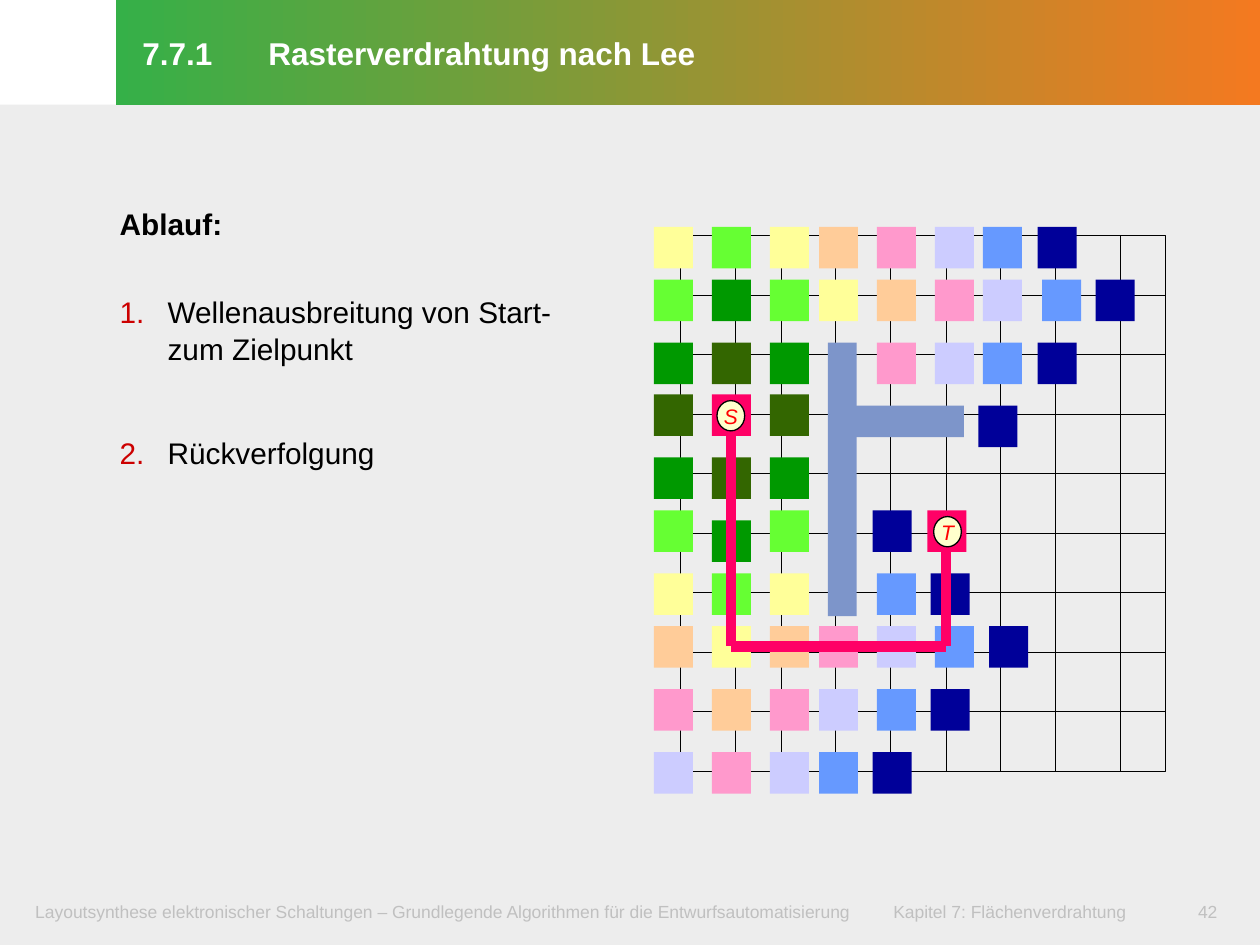
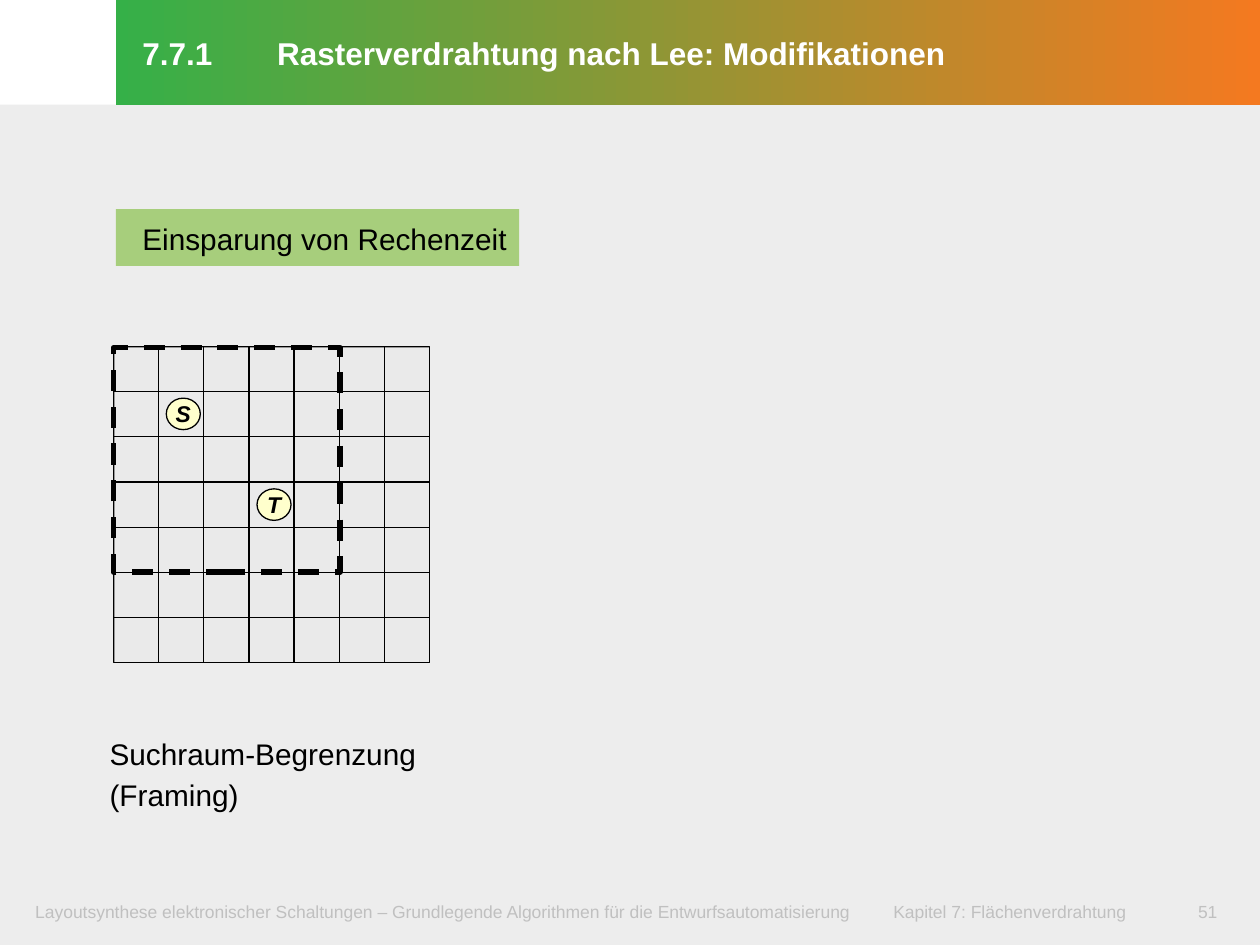
"""Builds two slides on Lee maze routing: wave expansion and search framing."""
from dataclasses import dataclass, field
from itertools import pairwise
from typing import Any

from lxml import etree
from pptx import Presentation
from pptx.dml.color import RGBColor
from pptx.enum.dml import MSO_LINE
from pptx.enum.shapes import MSO_CONNECTOR, MSO_SHAPE
from pptx.enum.text import MSO_ANCHOR, MSO_AUTO_SIZE, PP_ALIGN
from pptx.oxml.ns import qn
from pptx.util import Inches, Pt

RECT, OVAL, STRAIGHT = MSO_SHAPE.RECTANGLE, MSO_SHAPE.OVAL, MSO_CONNECTOR.STRAIGHT
LEFT, CENTER = PP_ALIGN.LEFT, PP_ALIGN.CENTER
TOP, MIDDLE = MSO_ANCHOR.TOP, MSO_ANCHOR.MIDDLE
NO_FIT, DASH = MSO_AUTO_SIZE.NONE, MSO_LINE.DASH

WIDTH, HEIGHT = Inches(10), Inches(7.5)
UNIT = WIDTH / 100
FONT = "Arial"
TITLE_LAYOUT, CONTENT_LAYOUT = 5, 1

COLORS = {
    "panel": "EDEDED", "footer": "C0C0C0", "band_start": "35B048",
    "band_end": "F47920", "white": "FFFFFF", "black": "000000",
    "number": "CC0000", "obstacle": "7D95CA", "route": "FF0066",
    "token": "FFFFCC", "token_letter": "FF0000", "field": "EAEAEA",
    "field_edge": "969696", "topic": "A7CE7C",
    "1": "336600", "2": "009900", "3": "66FF33", "4": "FFFF99", "5": "FFCC99",
    "6": "FF99CC", "7": "CCCCFF", "8": "6699FF", "9": "000099",
}


@dataclass(frozen=True)
class Box:
    """Area in columns and rows of a 100 by 75 slide grid."""
    left: float
    top: float
    width: float
    height: float

    def emu(self) -> tuple[int, ...]:
        """Return the area in slide units."""
        return tuple(span(v) for v in (self.left, self.top, self.width, self.height))


@dataclass(frozen=True)
class Style:
    """Font, paragraph and frame formats of a text."""
    size: float
    color: str = "black"
    bold: bool = False
    italic: bool = False
    paragraph: dict[str, Any] = field(default_factory=dict)
    insets: tuple[float, ...] = (2.1, 0.5, 1, 0.7)
    anchor: Any = TOP
    wrap: bool = True


@dataclass(frozen=True)
class Token:
    """Lettered start or target point."""
    letter: str
    box: Box


@dataclass(frozen=True)
class Step:
    """Body line with its gap above."""
    text: str
    gap: float
    numbered: bool


FIXED = {"alignment": LEFT, "line_spacing": Pt(23.5), "space_before": Pt(0)}
FOOTER = Style(10, "footer", insets=(1.2, 0.6, 1.2, 0.6))
PAGE = Style(10, "footer", paragraph={"alignment": CENTER}, insets=(1.2, 0.6, 1.2, 0.6))
TITLE = Style(18, "white", bold=True, paragraph=FIXED, anchor=MIDDLE)
CAPTION = Style(17, paragraph=FIXED)
TOPIC = Style(17, paragraph=FIXED, wrap=False)
TOKEN = {"paragraph": {"alignment": CENTER}, "insets": (0, 0, 0, 0),
         "anchor": MIDDLE, "wrap": False, "italic": True}
ROUTE_TOKEN = Style(12, "token_letter", **TOKEN)
FRAME_TOKEN = Style(13, bold=True, **TOKEN)

FOOTER_TEXT = ("Layoutsynthese elektronischer Schaltungen – Grundlegende Algorithmen "
               "für die Entwurfsautomatisierung\tKapitel 7: Flächenverdrahtung")
STEPS = (
    Step("Ablauf:", 0, False),
    Step("Wellenausbreitung von Start- zum Zielpunkt", 29.5, True),
    Step("Rückverfolgung", 39, True),
)

WAVE_COLUMNS = (51.9, 56.5, 61.1, 65, 69.6, 74.2, 78, 82.7, 87.3)
WAVE_ROWS = (18, 22.2, 27.2, 31.3, 36.3, 40.5, 45.5, 49.7, 54.7, 59.7)
WAVE = ("43456789", "323456789", "212 6789", "1S1   9", "212",
        "323 9T", "434 89", "5456789", "656789", "76789")
WAVE_COLORS = {"S": "route", "T": "route"}
FRONT_SHIFT = {"9": -0.35, "T": -0.6}
NUDGES = {(3, 6): (0, 0.9), (5, 1): (0, 0.8), (7, 6): (0.85, 0)}
OBSTACLES = (Box(65.7, 27.2, 2.3, 21.7), Box(66.5, 32.2, 10, 2.5))
TRACKS = [54, 58.4, 62, 66.3, 70.7, 75.1, 79.4, 83.8, 88.9, 92.5]
ROUTE = ((58, 33.8), (58, 38), (58, 43), (58, 47.2), (58, 51.3), (63, 51.3),
         (67.7, 51.3), (71.7, 51.3), (75.1, 51.3), (75.1, 47.2), (75.1, 43))


def span(cells: float) -> int:
    """Convert grid cells to slide units."""
    return round(cells * UNIT)


def rgb(color: str) -> RGBColor:
    """Look up a named colour."""
    return RGBColor.from_string(COLORS[color])


def apply(target: Any, values: dict[str, Any]) -> None:
    """Set every format value on the target."""
    for name, value in values.items():
        setattr(target, name, value)


def ppr_child(paragraph: Any, tag: str, **attributes: str) -> Any:
    """Append an element to the paragraph properties."""
    return etree.SubElement(paragraph._p.get_or_add_pPr(), qn(tag), attributes)


def format_frame(frame: Any, style: Style) -> None:
    """Set insets, anchor and wrapping of a text frame."""
    sides = ("margin_left", "margin_top", "margin_right", "margin_bottom")
    apply(frame, dict(zip(sides, map(span, style.insets))))
    apply(frame, {"auto_size": NO_FIT, "word_wrap": style.wrap,
                  "vertical_anchor": style.anchor})


def fill_paragraph(paragraph: Any, text: str, style: Style, tab: float = 0) -> None:
    """Write one formatted paragraph with an optional tab stop."""
    paragraph.text = text
    if tab:
        stops = ppr_child(paragraph, "a:tabLst")
        etree.SubElement(stops, qn("a:tab"), pos=str(span(tab)), algn="l")
    apply(paragraph, style.paragraph)
    for run in paragraph.runs:
        apply(run.font, {"name": FONT, "size": Pt(style.size),
                         "bold": style.bold, "italic": style.italic})
        run.font.color.rgb = rgb(style.color)


def write(shape: Any, text: str, style: Style, tab: float = 0) -> None:
    """Write a single paragraph into a shape."""
    format_frame(shape.text_frame, style)
    fill_paragraph(shape.text_frame.paragraphs[0], text, style, tab)


def add_text(slide: Any, box: Box, text: str, style: Style, tab: float = 0) -> Any:
    """Add a text box."""
    label = slide.shapes.add_textbox(*box.emu())
    write(label, text, style, tab)
    return label


def add_area(slide: Any, box: Box, fill: str = "", edge: str = "",
             weight: float = 0.75, preset: Any = RECT) -> Any:
    """Add a preset shape with optional fill and outline."""
    area = slide.shapes.add_shape(preset, *box.emu())
    area.shadow.inherit = False
    if fill:
        area.fill.solid()
        area.fill.fore_color.rgb = rgb(fill)
    else:
        area.fill.background()
    if edge:
        area.line.color.rgb = rgb(edge)
        area.line.width = Pt(weight)
    else:
        area.line.fill.background()
    return area


def add_line(slide: Any, start: tuple[float, float], end: tuple[float, float],
             color: str, weight: float) -> None:
    """Add a straight connector without shadow."""
    segment = slide.shapes.add_connector(STRAIGHT, *map(span, (*start, *end)))
    segment.line.color.rgb = rgb(color)
    segment.line.width = Pt(weight)
    etree.SubElement(segment._element.spPr, qn("a:effectLst"))


def add_grid(slide: Any, xs: list[float], ys: list[float], weight: float) -> None:
    """Draw an outline with its inner grid lines."""
    left, right, top, bottom = xs[0], xs[-1], ys[0], ys[-1]
    add_area(slide, Box(left, top, right - left, bottom - top), "", "black", weight)
    for y in ys[1:-1]:
        add_line(slide, (left, y), (right, y), "black", weight)
    for x in xs[1:-1]:
        add_line(slide, (x, top), (x, bottom), "black", weight)


def add_tokens(slide: Any, tokens: tuple[Token, ...], style: Style) -> None:
    """Draw the lettered points."""
    for token in tokens:
        disc = add_area(slide, token.box, "token", "black", preset=OVAL)
        write(disc, token.letter, style)


def share_on_master(deck: Any, slide: Any) -> None:
    """Place the grey panel and the footer on the slide master."""
    panel = add_area(slide, Box(0, 8.3, 100, 66.7), "panel")
    footer = add_text(slide, Box(1.6, 70.9, 91.7, 3.2), FOOTER_TEXT, FOOTER, 68.1)
    tree = deck.slide_master.shapes._spTree
    for order, part in enumerate((panel, footer)):
        part._element.nvSpPr.cNvPr.set("id", str(101 + order))
        tree.insert(2 + order, part._element)


def start_slide(deck: Any, layout: int, topic: str, page: str) -> Any:
    """Add a slide with its title band and page number."""
    slide = deck.slides.add_slide(deck.slide_layouts[layout])
    title = slide.shapes.title
    apply(title, dict(zip(("left", "top", "width", "height"),
                          Box(9.2, 0, 90.8, 8.3).emu())))
    title.fill.gradient()
    title.fill.gradient_angle = 0
    for stop, color in zip(title.fill.gradient_stops, ("band_start", "band_end")):
        stop.color.rgb = rgb(color)
    write(title, f"7.7.1\t{topic}", TITLE, 10)
    add_text(slide, Box(92.9, 70.9, 5.9, 3.2), page, PAGE)
    return slide


def write_steps(body: Any) -> None:
    """Fill the body placeholder with the numbered procedure."""
    apply(body, dict(zip(("left", "top", "width", "height"),
                         Box(8.5, 15.8, 40.9, 47.9).emu())))
    frame = body.text_frame
    format_frame(frame, Style(17, insets=(1, 0.5, 1, 0.5)))
    for index, step in enumerate(STEPS):
        paragraph = frame.add_paragraph() if index else frame.paragraphs[0]
        indent = span(3.8) if step.numbered else 0
        apply_indent = {"marL": str(indent), "indent": str(-indent)}
        for name, value in apply_indent.items():
            paragraph._p.get_or_add_pPr().set(name, value)
        if step.numbered:
            color = ppr_child(paragraph, "a:buClr")
            etree.SubElement(color, qn("a:srgbClr"), val=COLORS["number"])
            ppr_child(paragraph, "a:buAutoNum", type="arabicPeriod")
        else:
            ppr_child(paragraph, "a:buNone")
        spacing = {"line_spacing": 1.02, "space_before": Pt(step.gap)}
        fill_paragraph(paragraph, step.text,
                       Style(17, bold=not step.numbered, paragraph=spacing))


def add_wave(slide: Any) -> None:
    """Draw the cells of the expanding wave."""
    for row, marks in enumerate(WAVE):
        for column, mark in enumerate(marks):
            if mark == " ":
                continue
            dx, dy = NUDGES.get((row, column), (0, 0))
            left = WAVE_COLUMNS[column] + FRONT_SHIFT.get(mark, 0) + dx
            add_area(slide, Box(left, WAVE_ROWS[row] + dy, 3.1, 3.3),
                     WAVE_COLORS.get(mark, mark))


def build_routing(deck: Any) -> None:
    """Build the slide on wave expansion and backtracing."""
    slide = start_slide(deck, CONTENT_LAYOUT, "Rasterverdrahtung nach Lee", "42")
    share_on_master(deck, slide)
    write_steps(slide.placeholders[1])
    add_grid(slide, TRACKS, [18.7 + 42.5 / 9 * row for row in range(10)], 0.5)
    for obstacle in OBSTACLES:
        add_area(slide, obstacle, "obstacle")
    add_wave(slide)
    for start, end in pairwise(ROUTE):
        add_line(slide, start, end, "route", 6)
    add_tokens(slide, (Token("S", Box(56.9, 31.8, 2.2, 2.4)),
                       Token("T", Box(74.1, 41, 2.2, 2.4))), ROUTE_TOKEN)


def build_framing(deck: Any) -> None:
    """Build the slide on limiting the search space."""
    slide = start_slide(deck, TITLE_LAYOUT,
                        " Rasterverdrahtung nach Lee: Modifikationen", "51")
    add_area(slide, Box(9.1, 27.6, 25, 25), "field", "field_edge")
    offsets = [25.1 / 7 * line for line in range(8)]
    add_grid(slide, [9 + x for x in offsets], [27.5 + y for y in offsets], 0.75)
    search_frame = add_area(slide, Box(9, 27.6, 18, 17.8), "", "black", 3)
    search_frame.line.dash_style = DASH
    add_tokens(slide, (Token("S", Box(13.2, 31.6, 2.7, 2.5)),
                       Token("T", Box(20.4, 38.8, 2.7, 2.5))), FRAME_TOKEN)
    topic = add_text(slide, Box(9.2, 16.6, 32, 4.5), "Einsparung von Rechenzeit", TOPIC)
    topic.fill.solid()
    topic.fill.fore_color.rgb = rgb("topic")
    add_text(slide, Box(6.6, 57.5, 38.3, 7.7), "Suchraum-Begrenzung\v(Framing)", CAPTION)


def main() -> None:
    """Build and save the presentation."""
    deck = Presentation()
    apply(deck, {"slide_width": WIDTH, "slide_height": HEIGHT})
    build_routing(deck)
    build_framing(deck)
    deck.save("out.pptx")


if __name__ == "__main__":
    main()
